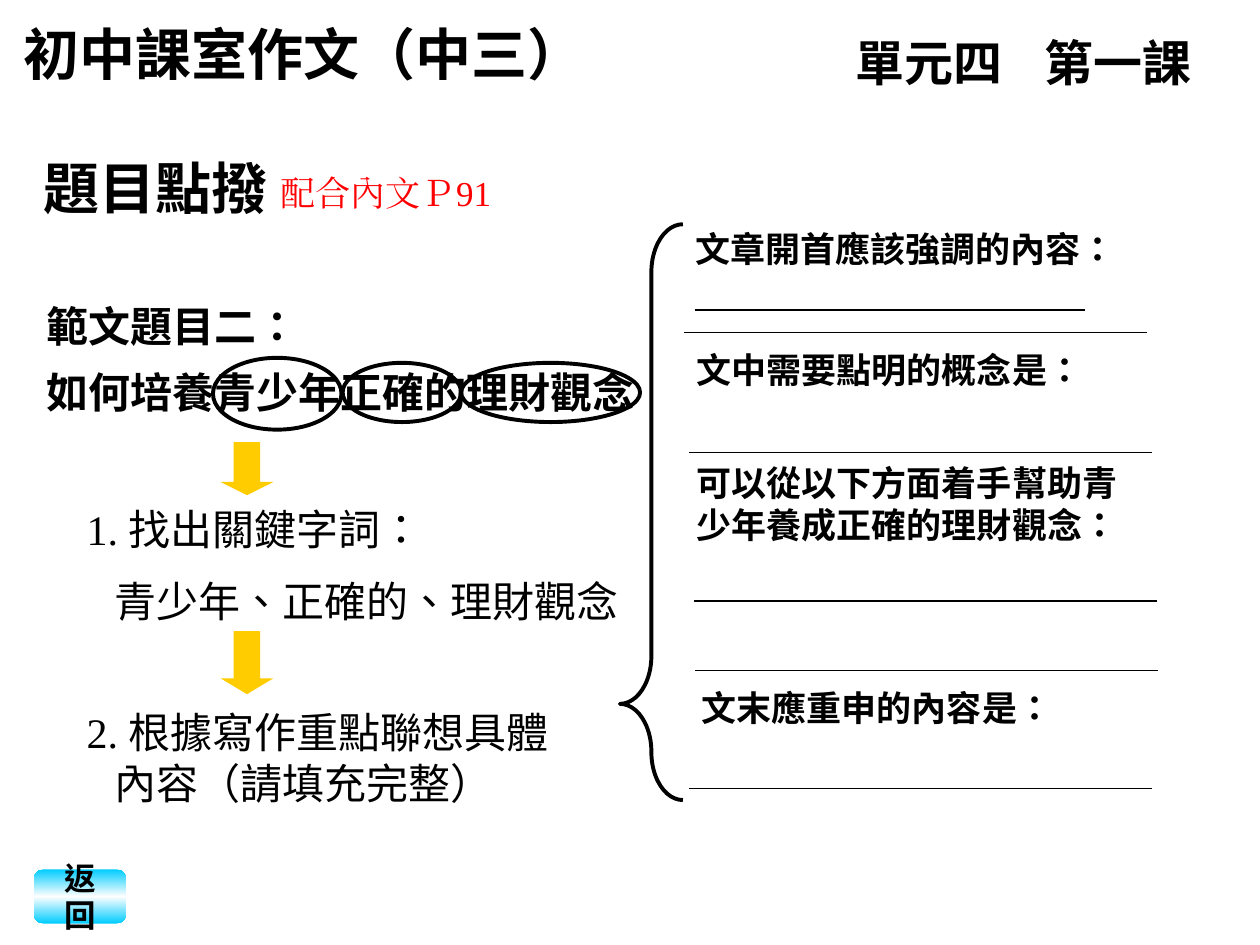
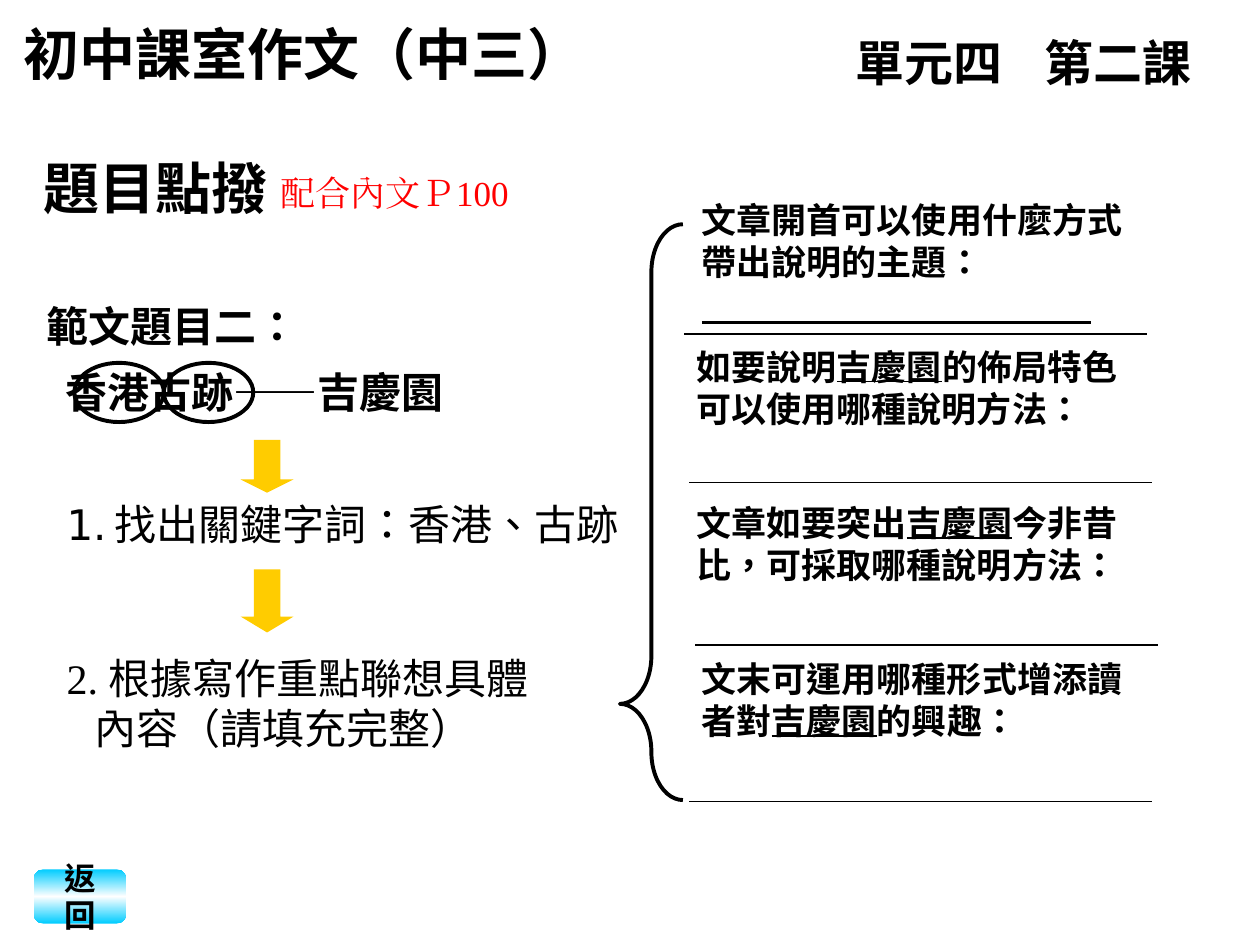
from copy import deepcopy
from dataclasses import dataclass

from pptx import Presentation
from pptx import util as u
from pptx.dml.color import RGBColor
from pptx.enum import shapes, text
from pptx.oxml.ns import qn
from pptx.oxml.xmlchemy import OxmlElement

COLS, ROWS = 100, 75
CELL = u.Inches(0.1)


@dataclass(frozen=True)
class Theme:
    ink: str = "000000"
    note: str = "FF0000"
    arrow: str = "FFCC00"
    button: tuple[str, ...] = ("00CCFF", "FFFFFF", "00CCFF")
    course_font: str = "Lato"
    heading_font: str = "Arial"
    body_font: str = "DejaVu Sans"
    number_font: str = "Times New Roman"
    dash_font: str = "Noto Sans CJK SC"
    heading: int = 32
    lesson: int = 28
    body: int = 24
    question: int = 20
    label: int = 18
    outline: float = 2.25
    rule: float = 0.75
    blank: float = 1.2


T = Theme()


@dataclass(frozen=True)
class Box:
    col: float
    row: float
    cols: float
    rows: float

    def emu(self) -> list[int]:
        return [round(n * CELL) for n in (self.col, self.row, self.cols, self.rows)]


@dataclass(frozen=True)
class Run:
    words: str
    font: str = T.body_font
    underline: bool = False


@dataclass(frozen=True)
class Par:
    runs: tuple[Run, ...]
    indent: float = 0
    before: float = 0
    spacing: float | None = None
    tab: float = 0
    numbered: bool = False


@dataclass(frozen=True)
class Style:
    size: int
    bold: bool = False
    color: str = T.ink


@dataclass(frozen=True)
class Rule:
    col: float
    row: float
    cols: float = 36.7
    weight: float = T.rule


@dataclass(frozen=True)
class Question:
    box: Box
    runs: tuple[Run, ...]


@dataclass(frozen=True)
class Step:
    box: Box
    pars: tuple[Par, ...]


@dataclass(frozen=True)
class Lesson:
    name: str
    page: str
    topic: Par
    circles: tuple[Box, ...]
    arrows: tuple[tuple[Box, float], ...]
    steps: tuple[Step, ...]
    questions: tuple[Question, ...]
    rules: tuple[Rule, ...]


HEADING = Style(T.heading, True)
TOPIC = Style(T.body, True)
STEP = Style(T.body)
QUESTION = Style(T.question, True)
NAME = Run("吉慶園", underline=True)


def plain(words: str, font: str = T.body_font) -> tuple[Par, ...]:
    return (Par((Run(words, font),)),)


def around_name(head: str, tail: str) -> tuple[Run, ...]:
    return Run(head), NAME, Run(tail)


def content_step(col: float, row: float) -> Step:
    return Step(Box(col, row, 41.7, 9), (
        Par((Run("2. ", T.number_font), Run("根據寫作重點聯想具體"))),
        Par((Run("內容（請填充完整）"),), indent=2.2)))


def arrow_pair(col: float, first: float, second: float) -> tuple[tuple[Box, float], ...]:
    return (Box(col, first, 4.2, 4.2), 0.25), (Box(col, second, 4.2, 5), 0.3)


def write(tf, pars: tuple[Par, ...], style: Style) -> None:
    tf.word_wrap = True
    for i, par in enumerate(pars):
        p = tf.paragraphs[0] if i == 0 else tf.add_paragraph()
        pPr = p._p.get_or_add_pPr()
        pPr.set("marL", str(round(par.indent * CELL)))
        pPr.set("indent", str(round(-par.indent * CELL) if par.numbered else 0))
        if par.numbered:
            number = OxmlElement("a:buAutoNum")
            number.set("type", "arabicPeriod")
            pPr.append(number)
        if par.tab:
            tabs = OxmlElement("a:tabLst")
            stop = OxmlElement("a:tab")
            stop.set("pos", str(round(par.tab * CELL)))
            stop.set("algn", "l")
            tabs.append(stop)
            pPr.append(tabs)
        if par.spacing:
            p.line_spacing = par.spacing
        if par.before:
            p.space_before = u.Pt(par.before)
        for run in par.runs:
            r = p.add_run()
            r.text = run.words
            r.font.size = u.Pt(style.size)
            r.font.bold = style.bold
            r.font.underline = run.underline
            r.font.color.rgb = RGBColor.from_string(style.color)
            r.font.name = run.font
            rPr = r._r.get_or_add_rPr()
            rPr.set("lang", "zh-TW")
            ea = OxmlElement("a:ea")
            ea.set("typeface", run.font)
            rPr.find(qn("a:latin")).addnext(ea)


def add_text(slide, box: Box, pars: tuple[Par, ...], style: Style) -> None:
    write(slide.shapes.add_textbox(*box.emu()).text_frame, pars, style)


def add_preset(slide, kind, box: Box, adjust: tuple[float, ...] = ()):
    sp = slide.shapes.add_shape(kind, *box.emu())
    sp.shadow.inherit = False
    for i, value in enumerate(adjust):
        sp.adjustments[i] = value
    return sp


def add_outline(slide, kind, box: Box, adjust: tuple[float, ...] = ()) -> None:
    sp = add_preset(slide, kind, box, adjust)
    sp.fill.background()
    sp.line.color.rgb = RGBColor.from_string(T.ink)
    sp.line.width = u.Pt(T.outline)


def add_arrow(slide, box: Box, head: float) -> None:
    sp = add_preset(slide, shapes.MSO_SHAPE.DOWN_ARROW, box, (0.5, head))
    sp.fill.solid()
    sp.fill.fore_color.rgb = RGBColor.from_string(T.arrow)
    sp.line.fill.background()


def add_rule(slide, rule: Rule) -> None:
    x, y, width, _ = Box(rule.col, rule.row, rule.cols, 0).emu()
    line = slide.shapes.add_connector(shapes.MSO_CONNECTOR.STRAIGHT, x, y, x + width, y)
    line.line.color.rgb = RGBColor.from_string(T.ink)
    line.line.width = u.Pt(rule.weight)
    line._element.spPr.append(OxmlElement("a:effectLst"))


def add_back_button(slide) -> None:
    sp = add_preset(slide, shapes.MSO_SHAPE.FLOWCHART_ALTERNATE_PROCESS, Box(2.7, 69, 7.3, 4.3))
    sp.line.fill.background()
    sp.fill.gradient()
    sp.fill.gradient_angle = 90
    stops = sp._element.spPr.find(".//" + qn("a:gsLst"))
    stops.insert(1, deepcopy(stops[0]))
    for i, (stop, color) in enumerate(zip(sp.fill.gradient_stops, T.button)):
        stop.position = i / (len(T.button) - 1)
        stop.color.rgb = RGBColor.from_string(color)
    write(sp.text_frame, plain("返回", T.heading_font), Style(T.label, True))
    sp.text_frame.vertical_anchor = text.MSO_ANCHOR.MIDDLE
    sp.text_frame.paragraphs[0].alignment = text.PP_ALIGN.CENTER


def add_frame(slide, lesson: Lesson) -> None:
    add_text(slide, Box(0.9, 1.1, 52.2, 6.3), plain("初中課室作文（中三）", T.course_font), HEADING)
    add_text(slide, Box(66.9, 2.1, 33, 5.7),
             (Par((Run(f"單元四\t{lesson.name}", T.course_font),), tab=13.4),),
             Style(T.lesson, True))
    add_text(slide, Box(2.5, 11.7, 30.8, 6.3), plain("題目點撥", T.heading_font), HEADING)
    add_text(slide, Box(21.3, 13.1, 24.7, 4.3), plain(f"配合內文Ｐ{lesson.page}", T.number_font),
             Style(T.question, color=T.note))
    add_outline(slide, shapes.MSO_SHAPE.LEFT_BRACE, Box(49.2, 17.8, 5, 45.7), (0.761, 0.833))
    add_back_button(slide)


def add_lesson(prs, lesson: Lesson) -> None:
    slide = prs.slides.add_slide(prs.slide_layouts[6])
    add_frame(slide, lesson)
    add_text(slide, Box(2.7, 22.2, 50, 11.4),
             (Par((Run("範文題目二："),), spacing=1.3), lesson.topic), TOPIC)
    for circle in lesson.circles:
        add_outline(slide, shapes.MSO_SHAPE.OVAL, circle)
    for box, head in lesson.arrows:
        add_arrow(slide, box, head)
    for step in lesson.steps:
        add_text(slide, step.box, step.pars, STEP)
    for question in lesson.questions:
        add_text(slide, question.box, (Par(question.runs),), QUESTION)
    for rule in lesson.rules:
        add_rule(slide, rule)


LESSONS = (
    Lesson(
        "第一課", "91",
        Par((Run("如何培養青少年正確的理財觀念"),), spacing=1.3),
        (Box(16.9, 28.4, 10.2, 5.7), Box(27.2, 28.8, 9.4, 4.7), Box(36.6, 28.8, 14.2, 4.7)),
        arrow_pair(17.5, 35.1, 50.1),
        (Step(Box(5.9, 39.5, 46.4, 11.1), (
            Par((Run("1. ", T.number_font), Run("找出關鍵字詞："))),
            Par((Run("青少年、正確的、理財觀念"),), indent=2.2, before=T.body / 2))),
         content_step(5.9, 55.6)),
        (Question(Box(54.2, 17.6, 37.8, 8), (Run("文章開首應該強調的內容："),)),
         Question(Box(54.3, 27.2, 35.8, 4.3), (Run("文中需要點明的概念是："),)),
         Question(Box(54.3, 36.1, 37.4, 7.7), (Run("可以從以下方面着手幫助青少年養成正確的理財觀念："),)),
         Question(Box(54.7, 54, 37.4, 4.3), (Run("文末應重申的內容是："),))),
        (Rule(55.2, 24.6, 30.9, T.blank), Rule(54.3, 26.4), Rule(54.7, 35.9),
         Rule(55.1, 47.7), Rule(55.2, 53.2), Rule(54.7, 62.6))),
    Lesson(
        "第二課", "100",
        Par((Run("香港古跡"), Run("——", T.dash_font), Run("吉慶園")), indent=1.5, spacing=1.3),
        (Box(5.9, 28.8, 7.1, 4.7), Box(13, 28.8, 7.1, 4.7)),
        arrow_pair(19.1, 34.9, 45.2),
        (Step(Box(4.3, 39.1, 46.4, 5),
              (Par((Run("找出關鍵字詞：香港、古跡"),), indent=3.8, numbered=True),)),
         content_step(4.3, 51.3)),
        (Question(Box(54.7, 15.3, 37.8, 11.3), (Run("文章開首可以使用什麼方式帶出說明的主題："),)),
         Question(Box(54.3, 26.9, 35.8, 7.7),
                  around_name("如要說明", "的佈局特色可以使用哪種說明方法：")),
         Question(Box(54.3, 39.3, 37.4, 7.7),
                  around_name("文章如要突出", "今非昔比，可採取哪種說明方法：")),
         Question(Box(54.7, 51.7, 37.4, 7.7),
                  around_name("文末可運用哪種形式增添讀者對", "的興趣："))),
        (Rule(55.7, 25.6, 30.9, T.blank), Rule(54.3, 26.5), Rule(54.7, 38.3),
         Rule(55.2, 51.2), Rule(54.7, 63.6))),
)


def main() -> None:
    prs = Presentation()
    prs.slide_width = COLS * CELL
    prs.slide_height = ROWS * CELL
    for lesson in LESSONS:
        add_lesson(prs, lesson)
    prs.save("out.pptx")


if __name__ == "__main__":
    main()
